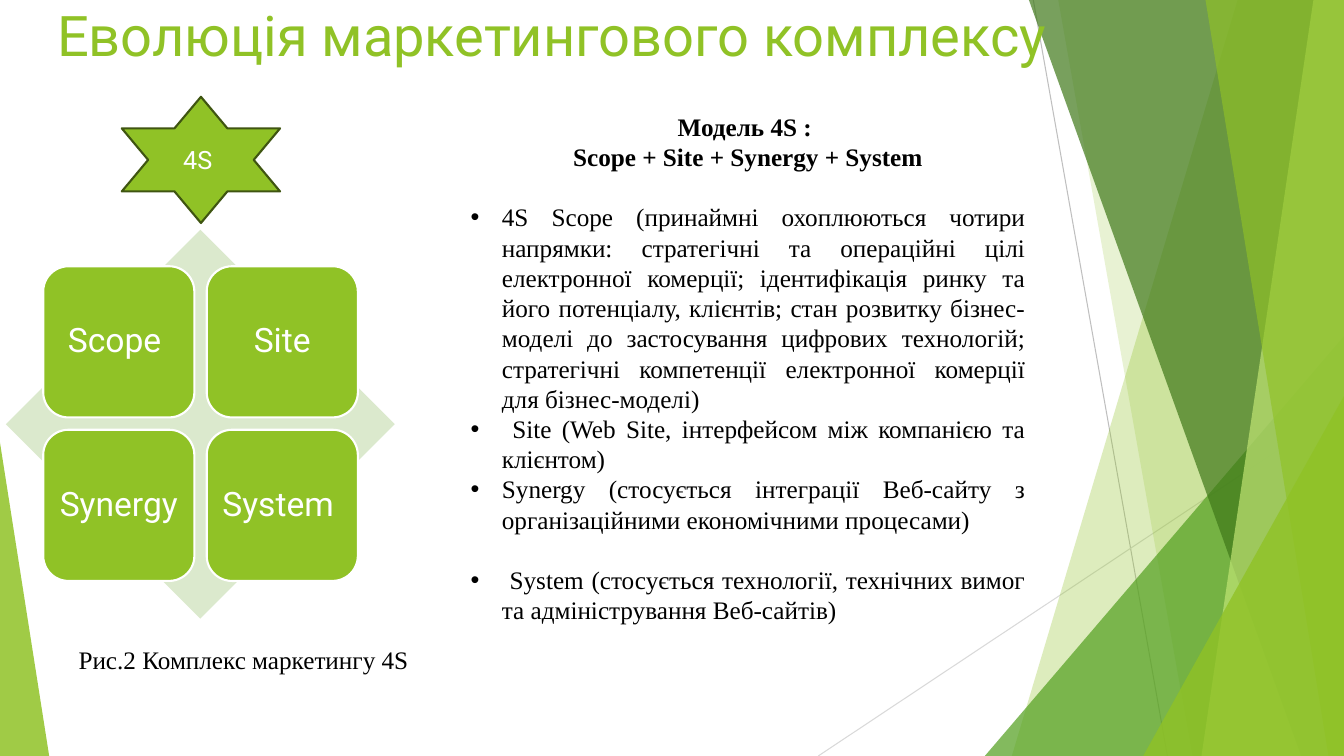
from pptx import Presentation
from pptx import util as u
from pptx.dml.color import RGBColor
from pptx.enum import shapes, text
from pptx.oxml.ns import qn
from lxml import etree

HUES = {"lime": "90C226", "leaf": "54A021", "moss": "3F7819", "pale": "C0E474",
        "mist": "DBE9CD", "edge": "3F5511", "white": "FFFFFF", "black": "000000",
        "gray": "BFBFBF", "ash": "D9D9D9"}
WIDE, HIGH = 33.87, 19.05
KIND = shapes.MSO_SHAPE
ALIGN = text.PP_ALIGN
ANCHOR = text.MSO_ANCHOR
SERIF = "Times New Roman"

deck = Presentation()
deck.slide_width, deck.slide_height = u.Cm(WIDE), u.Cm(HIGH)
slide = deck.slides.add_slide(deck.slide_layouts[6])
items = slide.shapes


def paint(shape, hue, alpha=100, line=None):
    shape.shadow.inherit = False
    shape.fill.solid()
    shape.fill.fore_color.rgb = RGBColor.from_string(HUES[hue])
    if alpha < 100:
        color = shape.fill._xPr.find(qn("a:solidFill"))[0]
        etree.SubElement(color, qn("a:alpha"), val=str(alpha * 1000))
    if line:
        shape.line.color.rgb = RGBColor.from_string(HUES[line])
        shape.line.width = u.Pt(1.5)
    else:
        shape.line.fill.background()


def write(frame, words, size=18, font="Roboto", hue="black", bold=False,
          align=ALIGN.LEFT, anchor=ANCHOR.TOP, after=0, lead=None, bullet=False):
    frame.word_wrap = True
    frame.vertical_anchor = anchor
    para = frame.paragraphs[0] if not frame.text else frame.add_paragraph()
    para.alignment = align
    para.space_after = u.Pt(after)
    if lead:
        para.line_spacing = lead
    run = para.add_run()
    run.text = words
    run.font.size, run.font.name, run.font.bold = u.Pt(size), font, bold
    run.font.color.rgb = RGBColor.from_string(HUES[hue])
    if bullet:
        props = para._p.get_or_add_pPr()
        props.set("marL", str(u.Cm(0.79)))
        props.set("indent", str(u.Cm(-0.79)))
        etree.SubElement(props, qn("a:buFont"), typeface="Arial")
        etree.SubElement(props, qn("a:buChar"), char="•")


for hue, x1, y1, x2 in [("gray", 26.04, 0, 29.42), ("ash", WIDE, 10.24, 20.62)]:
    ray = items.add_connector(shapes.MSO_CONNECTOR.STRAIGHT,
                              u.Cm(x1), u.Cm(y1), u.Cm(x2), u.Cm(HIGH))
    ray.line.color.rgb = RGBColor.from_string(HUES[hue])
    ray.line.width = u.Pt(0.75)
    etree.SubElement(ray._element.spPr, qn("a:effectLst"))

facets = [("lime", 30, 31.19, 25.5, 0), ("lime", 20, 26.67, 30.05, 0),
          ("leaf", 72, WIDE, 24.82, 8.47), ("moss", 70, 25.93, 32.79, 0),
          ("pale", 70, 33.1, 30.28, 0), ("lime", 65, 30.38, 33.48, 0),
          ("lime", 80, WIDE, 28.81, 9.98)]
for hue, alpha, head, foot, top in facets:
    if top:
        facet = items.add_shape(KIND.ISOSCELES_TRIANGLE, u.Cm(foot), u.Cm(top),
                                u.Cm(WIDE - foot), u.Cm(HIGH - top))
        facet.adjustments[0] = 1
    else:
        pen = items.build_freeform(u.Cm(head), u.Cm(0))
        pen.add_line_segments([(u.Cm(x), u.Cm(y)) for x, y in
                               [(WIDE, 0), (WIDE, HIGH), (foot, HIGH)]])
        facet = pen.convert_to_shape()
    paint(facet, hue, alpha)

wedge = items.add_shape(KIND.ISOSCELES_TRIANGLE, u.Cm(0), u.Cm(11.15),
                        u.Cm(1.24), u.Cm(7.9))
wedge.adjustments[0] = 0
paint(wedge, "lime", 85)

title = items.add_textbox(u.Cm(1.19), u.Cm(-0.56), u.Cm(27.08), u.Cm(2.39))
write(title.text_frame, "Еволюція маркетингового комплексу", size=40,
      hue="lime", anchor=ANCHOR.BOTTOM)

model = items.add_textbox(u.Cm(11.61), u.Cm(2.67), u.Cm(14.48), u.Cm(13.34)).text_frame
for words, after in [("Модель 4S : ", 0), ("Scope + Site + Synergy + System", 21.6)]:
    write(model, words, font=SERIF, bold=True, align=ALIGN.CENTER, after=after)
points = [
    ("4S Scope (принаймні охоплюються чотири напрямки: стратегічні та операційні "
     "цілі електронної комерції; ідентифікація ринку та його потенціалу, клієнтів; "
     "стан розвитку бізнес-моделі до застосування цифрових технологій; стратегічні "
     "компетенції електронної комерції для бізнес-моделі) ", 0),
    (" Site (Web Site, інтерфейсом між компанією та клієнтом) ", 0),
    ("Synergy (стосується інтеграції Веб-сайту з організаційними економічними "
     "процесами)", 21.6),
    (" System (стосується технології, технічних вимог та адміністрування "
     "Веб-сайтів)", 0)]
for words, after in points:
    write(model, words, font=SERIF, align=ALIGN.JUSTIFY, after=after, bullet=True)

star = items.add_shape(KIND.STAR_6_POINT, u.Cm(3.07), u.Cm(2.44), u.Cm(3.99), u.Cm(3.18))
paint(star, "lime", line="edge")
write(star.text_frame, "4S ", hue="white", align=ALIGN.CENTER, anchor=ANCHOR.MIDDLE)

rhomb = items.add_shape(KIND.DIAMOND, u.Cm(0.15), u.Cm(5.79), u.Cm(9.8), u.Cm(9.8))
paint(rhomb, "mist")

for i, name in enumerate(["Scope ", "Site", "Synergy", "System "]):
    row, col = divmod(i, 2)
    tile = items.add_shape(KIND.ROUNDED_RECTANGLE, u.Cm(1.09 + 4.12 * col),
                           u.Cm(6.71 + 4.12 * row), u.Cm(3.81), u.Cm(3.81))
    paint(tile, "lime", line="white")
    frame = tile.text_frame
    frame.margin_left = frame.margin_right = u.Cm(0)
    write(frame, name, size=24, hue="white", align=ALIGN.CENTER,
          anchor=ANCHOR.MIDDLE, lead=0.9)

note = items.add_textbox(u.Cm(1.73), u.Cm(16.1), u.Cm(18.03), u.Cm(1.02))
write(note.text_frame, "Рис.2 Комплекс маркетингу 4S", font=SERIF, align=ALIGN.JUSTIFY)

deck.save("out.pptx")
